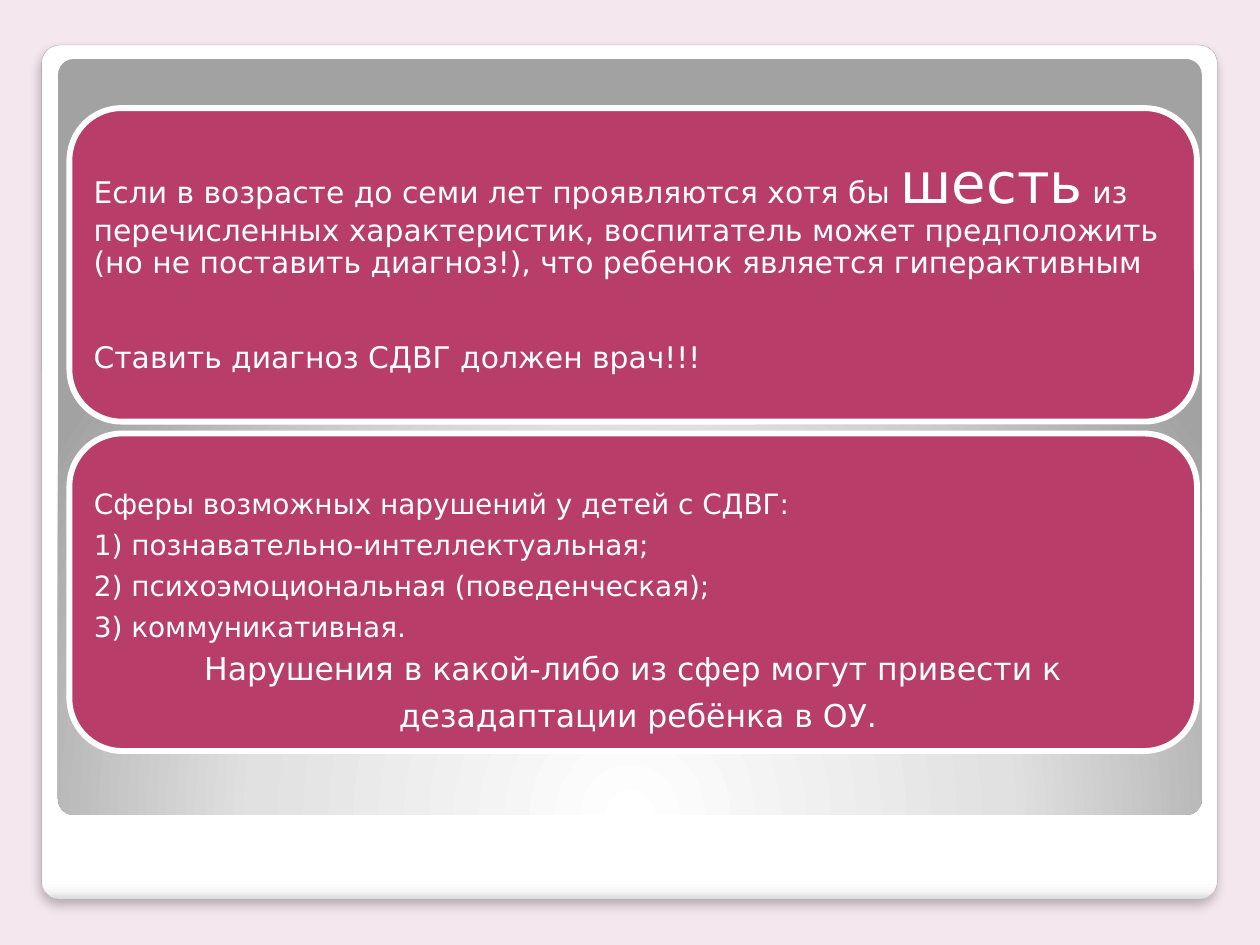
from lxml import etree
from pptx import Presentation
from pptx.dml.color import RGBColor
from pptx.enum.shapes import MSO_SHAPE
from pptx.enum.text import MSO_ANCHOR, PP_ALIGN
from pptx.oxml.ns import qn
from pptx.util import Cm, Pt

ROUNDED = MSO_SHAPE.ROUNDED_RECTANGLE
MIDDLE = MSO_ANCHOR.MIDDLE
LEFT, CENTER = PP_ALIGN.LEFT, PP_ALIGN.CENTER

COLORS = {
    "background": "F4E7ED",
    "card": "B83D68",
    "white": "FFFFFF",
    "frame_line": "A4A4A4",
    "shadow": "000000",
}
FRAME_STOPS = [(0, "FFFFFF"), (98, "FFFFFF"), (99, "F7F7F7"), (100, "DADADA")]
PANEL_STOPS = [(0, "FFFFFF"), (55, "E1E1E1"), (100, "A2A2A2")]
PANEL_FOCUS = {"l": 50, "t": 175, "r": 50, "b": -75}


def add_node(parent, tag, **attributes):
    node = etree.SubElement(parent, qn(tag))
    for name, value in attributes.items():
        node.set(name, str(value))
    return node


class SlideStyle:
    font = "DejaVu Sans"
    card_line = Pt(3.35)
    inset = Cm(0.18)

    def __init__(self, slide):
        self.slide = slide
        self.set_solid(slide.background.fill, "background")

    def set_solid(self, fill, color):
        fill.solid()
        fill.fore_color.rgb = RGBColor.from_string(COLORS[color])

    def rounded(self, box, line=None, width=0, corner=None):
        shape = self.slide.shapes.add_shape(ROUNDED, *map(Cm, box))
        shape.shadow.inherit = False
        if corner is not None:
            shape.adjustments[0] = corner
        if line:
            self.set_solid(shape.line.fill, line)
            shape.line.width = width
        else:
            shape.line.fill.background()
        return shape

    def gradient(self, shape, stops, focus=None):
        """Fill from top to bottom, or in circles around a focus in percent."""
        shape.fill.gradient()
        gradient = shape.element.spPr.find(qn("a:gradFill"))
        for child in list(gradient):
            gradient.remove(child)
        stop_list = add_node(gradient, "a:gsLst")
        for position, color in stops:
            stop = add_node(stop_list, "a:gs", pos=position * 1000)
            add_node(stop, "a:srgbClr", val=color)
        if focus:
            circle = add_node(gradient, "a:path", path="circle")
            edges = {side: percent * 1000 for side, percent in focus.items()}
            add_node(circle, "a:fillToRect", **edges)
        else:
            add_node(gradient, "a:lin", ang=90 * 60000, scaled=0)

    def drop_shadow(self, shape):
        effects = shape.element.spPr.find(qn("a:effectLst"))
        shadow = add_node(effects, "a:outerShdw", blurRad=Pt(6), dist=Pt(4),
                          dir=90 * 60000, algn="t", rotWithShape=0)
        color = add_node(shadow, "a:srgbClr", val=COLORS["shadow"])
        add_node(color, "a:alpha", val=25000)

    def card(self, box, paragraphs, **margins):
        """Each paragraph is (runs, paragraph format); a run is (text, size)."""
        card = self.rounded(box, "white", self.card_line)
        self.set_solid(card.fill, "card")
        frame = card.text_frame
        layout = {
            "word_wrap": True,
            "vertical_anchor": MIDDLE,
            "margin_left": self.inset,
            "margin_right": self.inset,
            "margin_top": self.inset,
            "margin_bottom": self.inset,
        }
        for name, value in (layout | margins).items():
            setattr(frame, name, value)
        for index, (runs, paragraph_format) in enumerate(paragraphs):
            paragraph = frame.paragraphs[0] if index == 0 else frame.add_paragraph()
            spacing = {"alignment": LEFT, "line_spacing": 0.9}
            for name, value in (spacing | paragraph_format).items():
                setattr(paragraph, name, value)
            for text, size in runs:
                run = paragraph.add_run()
                run.text = text
                for name, value in {"name": self.font, "size": Pt(size)}.items():
                    setattr(run.font, name, value)
                self.set_solid(run.font.fill, "white")


def main():
    deck = Presentation()
    deck.slide_width, deck.slide_height = Cm(25.4), Cm(19.05)
    style = SlideStyle(deck.slides.add_slide(deck.slide_layouts[6]))

    frame = style.rounded((0.84, 0.91, 23.7, 17.22), "frame_line", Pt(0.16), 0.021)
    style.gradient(frame, FRAME_STOPS)
    style.drop_shadow(frame)
    panel = style.rounded((1.17, 1.19, 23.06, 15.24), corner=0.021)
    style.gradient(panel, PANEL_STOPS, PANEL_FOCUS)

    diagnosis = [
        ([("Если в возрасте до семи лет проявляются хотя бы ", 17),
          ("шесть", 32),
          (" из перечисленных характеристик, воспитатель может предположить "
           "(но не поставить диагноз!), что ребенок является гиперактивным", 17)],
         {"space_after": Pt(36)}),
        ([("Ставить диагноз СДВГ должен врач!!!", 17)], {}),
    ]
    style.card((1.4, 2.18, 22.73, 6.32), diagnosis)

    spheres = [
        "Сферы возможных нарушений у детей с СДВГ:",
        "1) познавательно-интеллектуальная;",
        "2) психоэмоциональная (поведенческая);",
        "3) коммуникативная.",
    ]
    conclusion = [
        "Нарушения в какой-либо из сфер могут привести к",
        " дезадаптации ребёнка в ОУ.",
    ]
    disorders = [([(text, 16)], {"space_after": Pt(6)}) for text in spheres]
    disorders += [([(text, 18)], {"space_after": Pt(7), "alignment": CENTER})
                  for text in conclusion]
    style.card((1.4, 8.74, 22.73, 6.4), disorders,
               margin_top=Cm(0.81), margin_bottom=0)

    deck.save("out.pptx")


if __name__ == "__main__":
    main()
